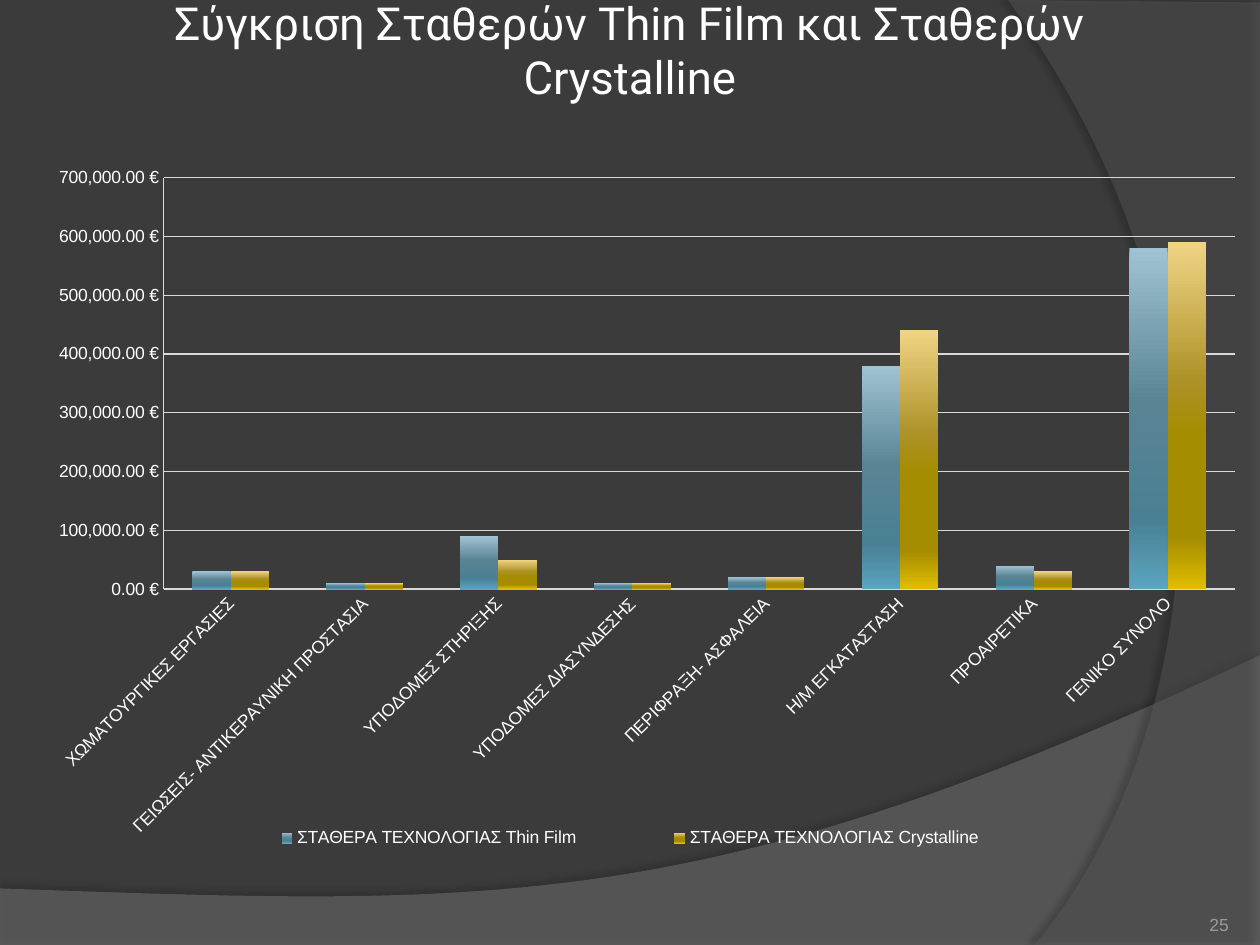
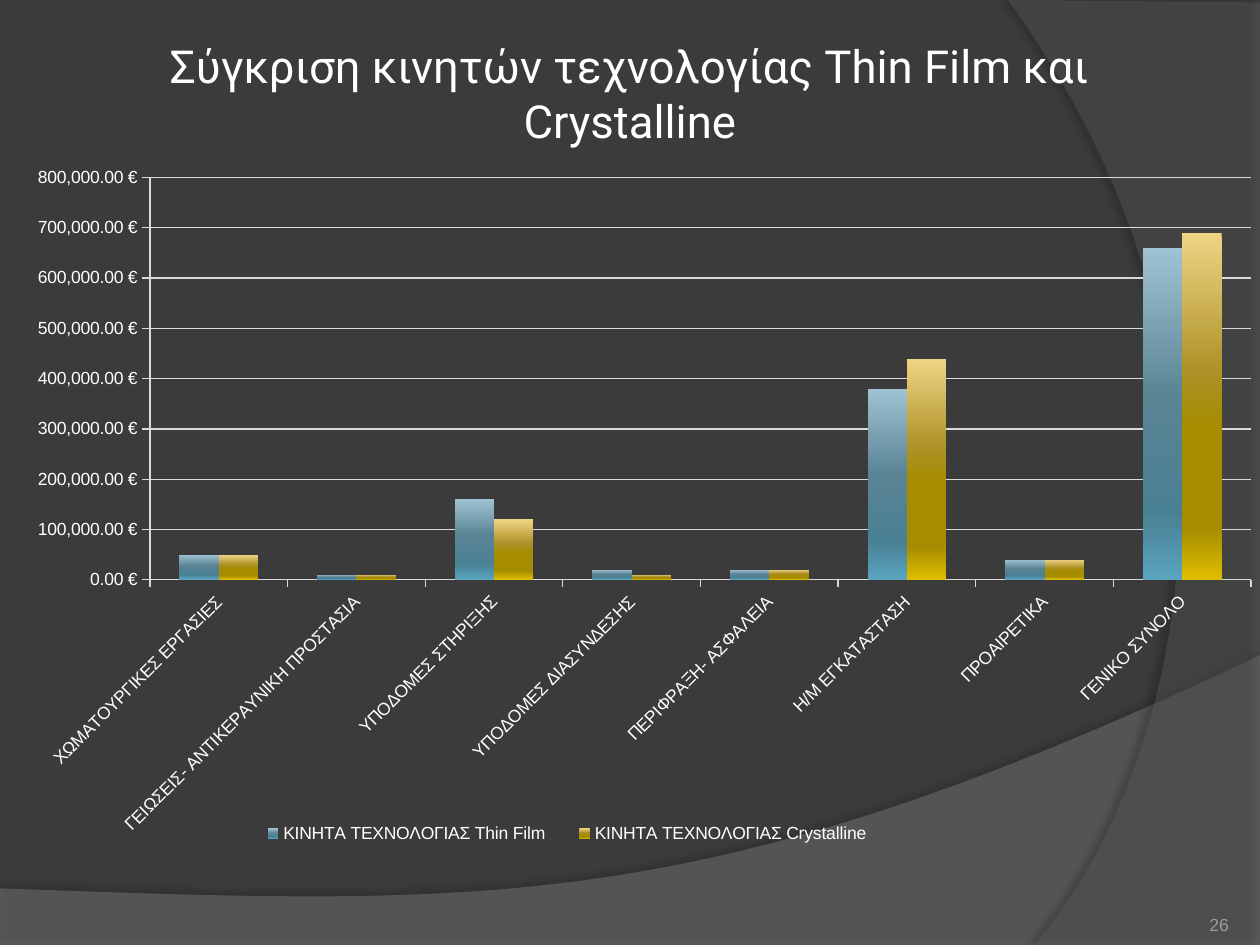
"""Build two slides comparing Thin Film and Crystalline installation costs."""
from dataclasses import dataclass

from lxml import etree
from pptx import Presentation
from pptx import util as u
from pptx.chart import data as chart_data
from pptx.dml.color import RGBColor
from pptx.enum import chart as ch
from pptx.enum import text
from pptx.oxml import parse_xml
from pptx.oxml.ns import nsdecls


@dataclass(frozen=True)
class Theme:
    background: str = "3B3B3B"
    ink: str = "FFFFFF"
    grid: str = "D9D9D9"
    number: str = "9D9B9A"
    title_font: str = "Roboto"
    body_font: str = "Arial"
    title_size: int = 26
    body_size: int = 10
    bars: tuple = (
        ((0, "A0C3D3"), (45, "5A8494"), (80, "4A8094"), (100, "5AA5C0")),
        ((0, "F0D485"), (40, "AD9228"), (55, "A58C00"), (85, "A58C00"), (100, "E0BE00")),
    )


theme = Theme()


def bezier(start, control_1, control_2, end, steps=48):
    """Return points along a cubic curve, without its start."""
    points = []
    for step in range(1, steps + 1):
        t = step / steps
        weights = ((1 - t) ** 3, 3 * t * (1 - t) ** 2, 3 * t * t * (1 - t), t ** 3)
        points.append(tuple(
            sum(w * p[axis] for w, p in zip(weights, (start, control_1, control_2, end)))
            for axis in (0, 1)))
    return points


def manual_layout(x, y, w, h, inner=False):
    """Return a chart layout element in fractions of the chart."""
    target = '<c:layoutTarget val="inner"/>' if inner else ""
    return parse_xml(
        f'<c:layout {nsdecls("c")}><c:manualLayout>{target}'
        '<c:xMode val="edge"/><c:yMode val="edge"/>'
        f'<c:x val="{x}"/><c:y val="{y}"/><c:w val="{w}"/><c:h val="{h}"/>'
        '</c:manualLayout></c:layout>')


categories = (
    "ΧΩΜΑΤΟΥΡΓΙΚΕΣ ΕΡΓΑΣΙΕΣ", "ΓΕΙΩΣΕΙΣ- ΑΝΤΙΚΕΡΑΥΝΙΚΗ ΠΡΟΣΤΑΣΙΑ",
    "ΥΠΟΔΟΜΕΣ ΣΤΗΡΙΞΗΣ", "ΥΠΟΔΟΜΕΣ ΔΙΑΣΥΝΔΕΣΗΣ", "ΠΕΡΙΦΡΑΞΗ- ΑΣΦΑΛΕΙΑ",
    "Η/Μ ΕΓΚΑΤΑΣΤΑΣΗ", "ΠΡΟΑΙΡΕΤΙΚΑ", "ΓΕΝΙΚΟ ΣΥΝΟΛΟ")

comparisons = (
    dict(
        title="Σύγκριση Σταθερών Thin Film και Σταθερών Crystalline",
        title_height=1.42, title_bottom_inset=1.09, mounting="ΣΤΑΘΕΡΑ", number=25,
        thin_film=(30000, 10000, 90000, 10000, 20000, 380000, 40000, 580000),
        crystalline=(30000, 10000, 50000, 10000, 20000, 440000, 30000, 590000),
        chart_top=1.78, chart_height=16.08, maximum=700000,
        ticks=ch.XL_TICK_MARK.NONE,
        plot=(0.13, 0.112, 0.85, 0.516), legend=(0.15, 0.91, 0.7, 0.06)),
    dict(
        title="Σύγκριση κινητών τεχνολογίας Thin Film και Crystalline",
        title_height=2.21, title_bottom_inset=0.13, mounting="ΚΙΝΗΤΑ", number=26,
        thin_film=(50000, 10000, 160000, 20000, 20000, 380000, 40000, 660000),
        crystalline=(50000, 10000, 120000, 10000, 20000, 440000, 40000, 690000),
        chart_top=2.97, chart_height=14.88, maximum=800000,
        ticks=ch.XL_TICK_MARK.OUTSIDE,
        plot=(0.119, 0.041, 0.874, 0.545), legend=(0.19, 0.9, 0.52, 0.06)),
)

prs = Presentation()
prs.slide_width, prs.slide_height = u.Cm(25.4), u.Cm(19.05)
master = prs.slide_master
master.background.fill.solid()
master.background.fill.fore_color.rgb = RGBColor.from_string(theme.background)
title_only = prs.slide_layouts[5]
slides = [prs.slides.add_slide(title_only) for _ in comparisons]

lower_band = [(0, 17.91), (0, 19.08), (25.4, 19.08), (25.4, 13.21)]
lower_band += bezier(lower_band[-1], (14.2, 18.52), (9.93, 18.26), (0, 17.91))
right_band = [(25.4, 0.05), (25.4, 19.05), (20.85, 19.05)]
right_band += bezier(right_band[-1], (23.75, 15.72), (25.86, 7.62), (20.32, 0))
bands = (
    (lower_band, "7F7F7F", 45, 35, 3.5, 270),
    (right_band, "5E5E5E", 40, 45, 4, 180),
)
for position, (outline, color, opacity, shade, distance, angle) in enumerate(bands, 2):
    corners = [(u.Cm(x), u.Cm(y)) for x, y in outline]
    builder = slides[0].shapes.build_freeform(*corners[0])
    builder.add_line_segments(corners[1:], close=True)
    band = builder.convert_to_shape()
    band.line.fill.background()
    band.fill.solid()
    band.fill.fore_color.rgb = RGBColor.from_string(color)
    band_color = band.element.xpath("./p:spPr/a:solidFill/a:srgbClr")[0]
    band_color.append(parse_xml(f'<a:alpha {nsdecls("a")} val="{opacity * 1000}"/>'))
    band.element.spPr.append(parse_xml(
        f'<a:effectLst {nsdecls("a")}><a:outerShdw blurRad="{u.Pt(4)}" '
        f'dist="{u.Pt(distance)}" dir="{angle * 60000}" rotWithShape="0">'
        f'<a:srgbClr val="000000"><a:alpha val="{shade * 1000}"/></a:srgbClr>'
        '</a:outerShdw></a:effectLst>'))
    master.element.cSld.spTree.insert(position, band.element)

for slide, comparison in zip(slides, comparisons):
    heading = slide.shapes.title
    heading.left, heading.top = u.Cm(1.27), u.Cm(0.76)
    heading.width, heading.height = u.Cm(22.86), u.Cm(comparison["title_height"])
    frame = heading.text_frame
    frame.text = comparison["title"]
    frame.word_wrap = True
    frame.auto_size = text.MSO_AUTO_SIZE.NONE
    frame.vertical_anchor = text.MSO_ANCHOR.MIDDLE
    frame.margin_left = frame.margin_right = frame.margin_top = u.Cm(0.13)
    frame.margin_bottom = u.Cm(comparison["title_bottom_inset"])
    line = frame.paragraphs[0]
    line.alignment = text.PP_ALIGN.CENTER
    line.font.name, line.font.size = theme.title_font, u.Pt(theme.title_size)
    line.font.color.rgb = RGBColor.from_string(theme.ink)

    costs = chart_data.CategoryChartData(number_format='#,##0.00\\ "€"')
    costs.categories = categories
    for technology, key in (("Thin Film", "thin_film"), ("Crystalline", "crystalline")):
        costs.add_series(f"{comparison['mounting']} ΤΕΧΝΟΛΟΓΙΑΣ {technology}", comparison[key])
    chart = slide.shapes.add_chart(
        ch.XL_CHART_TYPE.COLUMN_CLUSTERED, u.Cm(0), u.Cm(comparison["chart_top"]),
        u.Cm(25.4), u.Cm(comparison["chart_height"]), costs).chart
    chart.has_title = False
    chart.font.name, chart.font.size = theme.body_font, u.Pt(theme.body_size)
    chart.font.color.rgb = RGBColor.from_string(theme.ink)

    columns = chart.plots[0]
    columns.gap_width, columns.overlap = 150, 0
    columns.vary_by_categories = False
    for series, stops in zip(columns.series, theme.bars):
        series.format.line.fill.background()
        gradient = "".join(
            f'<a:gs pos="{place * 1000}"><a:srgbClr val="{color}"/></a:gs>'
            for place, color in stops)
        series.format.fill.background()
        bar_fill = series.format.fill
        bar_properties = chart.element.xpath(".//c:ser/c:spPr")[series.index]
        bar_properties.replace(bar_properties.xpath("./a:noFill")[0], parse_xml(
            f'<a:gradFill {nsdecls("a")} rotWithShape="1"><a:gsLst>{gradient}</a:gsLst>'
            '<a:lin ang="5400000" scaled="0"/></a:gradFill>'))

    amounts, works = chart.value_axis, chart.category_axis
    amounts.minimum_scale, amounts.maximum_scale = 0, comparison["maximum"]
    amounts.major_unit = 100000
    amounts.has_major_gridlines = True
    amounts.tick_labels.number_format = '#,##0.00\\ "€"'
    amounts.tick_labels.number_format_is_linked = False
    for axis in (amounts, works):
        axis.major_tick_mark = comparison["ticks"]
    for rule in (amounts.format.line, works.format.line, amounts.major_gridlines.format.line):
        rule.width = u.Pt(0.75)
        rule.color.rgb = RGBColor.from_string(theme.grid)
    works.tick_labels.font.size = u.Pt(theme.body_size)
    works.tick_labels.font.color.rgb = RGBColor.from_string(theme.ink)
    label_body = chart.element.xpath(".//c:catAx/c:txPr/a:bodyPr")[0]
    label_body.set("rot", str(-45 * 60000))
    label_body.set("vert", "horz")

    chart.has_legend = True
    chart.legend.position = ch.XL_LEGEND_POSITION.RIGHT
    chart.legend.include_in_layout = False
    plot_area = chart.element.xpath("./c:chart/c:plotArea")[0]
    legend = chart.element.xpath("./c:chart/c:legend")[0]
    for part in (plot_area, legend):
        for automatic in part.xpath("./c:layout"):
            part.remove(automatic)
    plot_area.insert(0, manual_layout(*comparison["plot"], inner=True))
    legend.insert(1, manual_layout(*comparison["legend"]))
    clear = f'<c:spPr {nsdecls("c", "a")}><a:noFill/><a:ln><a:noFill/></a:ln></c:spPr>'
    plot_area.append(parse_xml(clear))
    chart.element.xpath("./c:chart")[0].addnext(parse_xml(clear))

    footer = slide.shapes.add_textbox(u.Cm(22.66), u.Cm(17.83), u.Cm(2.11), u.Cm(1.02))
    frame = footer.text_frame
    frame.word_wrap = True
    frame.vertical_anchor = text.MSO_ANCHOR.BOTTOM
    frame.margin_left = frame.margin_right = frame.margin_top = frame.margin_bottom = 0
    frame.text = str(comparison["number"])
    line = frame.paragraphs[0]
    line.alignment = text.PP_ALIGN.RIGHT
    line.font.name, line.font.size = theme.body_font, u.Pt(theme.body_size)
    line.font.color.rgb = RGBColor.from_string(theme.number)

prs.save("out.pptx")
